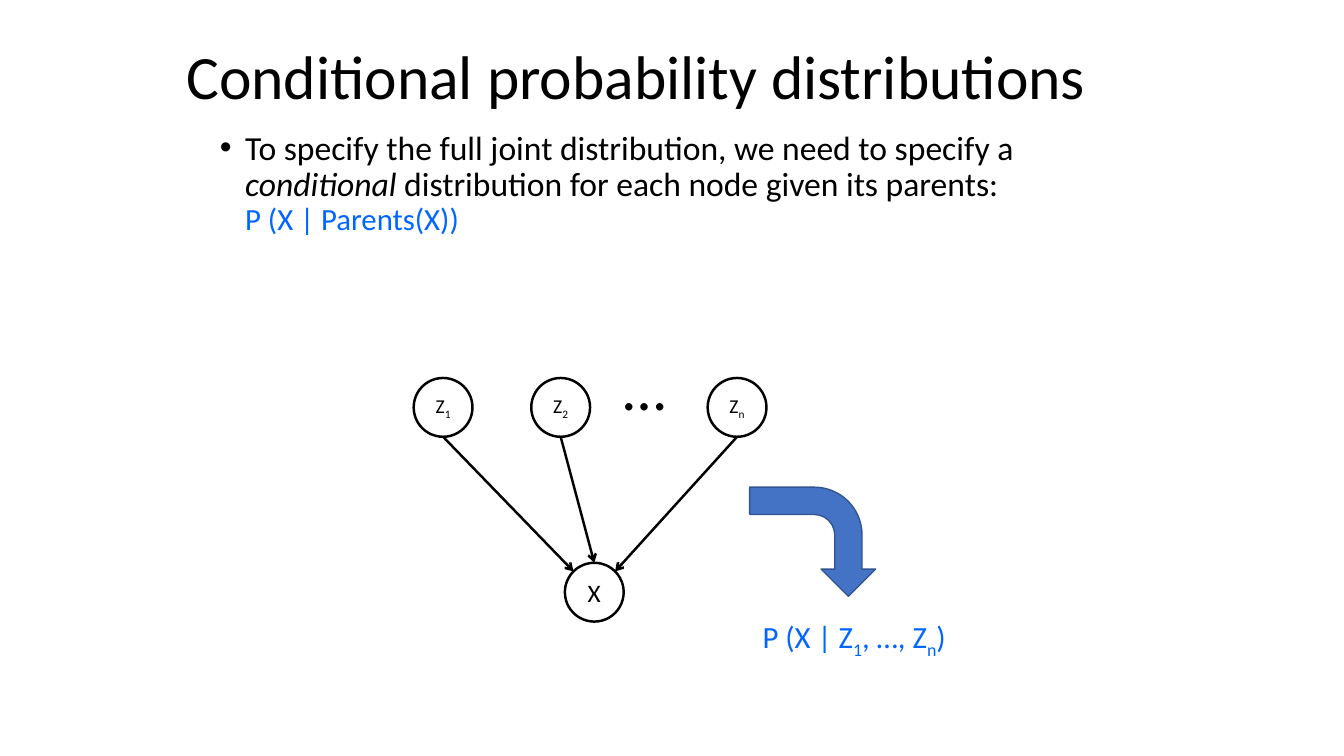
import math

from lxml import etree
from pptx import Presentation
from pptx.dml.color import RGBColor
from pptx.enum.shapes import MSO_CONNECTOR, MSO_SHAPE
from pptx.enum.text import MSO_ANCHOR, PP_ALIGN
from pptx.oxml.ns import qn
from pptx.util import Pt

PX = 9525
FONT = "Calibri"
COLORS = {"ink": "000000", "formula": "0066FF", "arrow": "4472C4", "arrow_edge": "325491"}
OVAL, BENT_ARROW = MSO_SHAPE.OVAL, MSO_SHAPE.BENT_ARROW
STRAIGHT = MSO_CONNECTOR.STRAIGHT
CENTER, LEFT = PP_ALIGN.CENTER, PP_ALIGN.LEFT
MIDDLE, TOP = MSO_ANCHOR.MIDDLE, MSO_ANCHOR.TOP
NODE = 56
LINE_WIDTH = 1.75


def px(*lengths):
    """Turn pixel lengths into EMU."""
    return [round(length * PX) for length in lengths]


def color(name):
    """Look up a named colour."""
    return RGBColor.from_string(COLORS[name])


def write_text(shape, runs, size, fill="ink", align=LEFT, anchor=TOP, spacing=None,
               margin=0, hanging=0, bullet=None, wrap=True, inset=None):
    """Fill a shape with one paragraph of (text, format) runs; a newline breaks the line."""
    frame = shape.text_frame
    frame.word_wrap = wrap
    frame.vertical_anchor = anchor
    if inset is not None:
        frame.margin_left = frame.margin_right = frame.margin_top = frame.margin_bottom = inset
    paragraph = frame.paragraphs[0]
    paragraph.alignment = align
    if spacing:
        paragraph.line_spacing = spacing
    properties = paragraph._p.get_or_add_pPr()
    if margin:
        properties.set("marL", str(margin * PX))
        properties.set("indent", str(-hanging * PX))
    if bullet:
        etree.SubElement(properties, qn("a:buFont")).set("typeface", "Arial")
        etree.SubElement(properties, qn("a:buChar")).set("char", bullet)
    for text, style in runs:
        if text == "\n":
            paragraph.add_line_break()
            continue
        run = paragraph.add_run()
        run.text = text
        run.font.name = FONT
        run.font.size = Pt(style.get("size", size))
        run.font.italic = style.get("italic", False)
        run.font.color.rgb = color(style.get("fill", fill))
        if style.get("subscript"):
            run.font._element.set("baseline", "-25000")


def add_text(slide, box, runs, size, **text_format):
    """Add a text box at the given box."""
    write_text(slide.shapes.add_textbox(*px(*box)), runs, size, **text_format)


def subscripted(*pieces):
    """Make runs in which every second piece is a subscript."""
    return [(piece, {"subscript": index % 2 == 1}) for index, piece in enumerate(pieces)]


def add_node(slide, left, top, runs, size):
    """Draw one round network node with its label."""
    node = slide.shapes.add_shape(OVAL, *px(left, top, NODE, NODE))
    node.shadow.inherit = False
    node.fill.background()
    node.line.color.rgb = color("ink")
    node.line.width = Pt(LINE_WIDTH)
    write_text(node, runs, size, align=CENTER, anchor=MIDDLE, wrap=False, inset=0)


def add_edge(slide, start, end):
    """Draw an arrow from a parent node to its child."""
    edge = slide.shapes.add_connector(STRAIGHT, *px(*start, *end))
    edge.line.color.rgb = color("ink")
    edge.line.width = Pt(LINE_WIDTH)
    etree.SubElement(edge.line._get_or_add_ln(), qn("a:tailEnd")).set("type", "arrow")
    etree.SubElement(edge._element.spPr, qn("a:effectLst"))


def add_heading(slide, box):
    """Place the slide title."""
    add_text(slide, box, [("Conditional probability distributions", {})], 44,
             anchor=MIDDLE, spacing=0.9)


def add_body(slide, box):
    """Place the bulleted statement and its formula."""
    runs = [
        ("To specify the full joint distribution, we need to specify a ", {}),
        ("conditional", {"italic": True}),
        (" distribution for each node given its parents: ", {}),
        ("\n", {}),
        ("P (X | Parents(X))", {"size": 22, "fill": "formula"}),
    ]
    add_text(slide, box, runs, 24, spacing=0.9, margin=24, hanging=24, bullet="•")


def add_network(slide, box):
    """Draw the parent nodes, the child node and the edges between them."""
    left, top, width, height = box
    radius = NODE / 2
    child_left, child_top = left + 144, top + height - NODE
    parents = [("1", 0, -45), ("2", 112, 0), ("n", width - NODE, 45)]
    for name, offset, degrees in parents:
        add_node(slide, left + offset, top, subscripted("Z", name), 14)
        angle = math.radians(degrees)
        end = (child_left + radius + radius * math.sin(angle),
               child_top + radius - radius * math.cos(angle))
        add_edge(slide, (left + offset + radius, top + NODE), end)
    add_node(slide, child_left, child_top, [("X", {})], 18)
    add_text(slide, (left + 190, top - 32, 60, 81), [("…", {})], 44, wrap=False)


def add_result(slide, box):
    """Draw the bent arrow and the resulting distribution below it."""
    left, top, width, height = box
    arrow = slide.shapes.add_shape(BENT_ARROW, *px(left + 55, top, 104, 120))
    arrow.rotation = 90
    arrow.shadow.inherit = False
    arrow.fill.solid()
    arrow.fill.fore_color.rgb = color("arrow")
    arrow.line.color.rgb = color("arrow_edge")
    arrow.line.width = Pt(1)
    add_text(slide, (left, top + height - 45, width, 45),
             subscripted("P (X | Z", "1", ", …, Z", "n", ")"), 22,
             fill="formula", align=CENTER, margin=48, wrap=False)


def main():
    """Build and save the presentation."""
    presentation = Presentation()
    presentation.slide_width, presentation.slide_height = px(1280, 720)
    slide = presentation.slides.add_slide(presentation.slide_layouts[6])
    add_heading(slide, (168, 16, 944, 120))
    add_body(slide, (200, 120, 880, 256))
    add_network(slide, (394, 360, 336, 232))
    add_result(slide, (667, 456, 245, 173))
    presentation.save("out.pptx")


if __name__ == "__main__":
    main()
